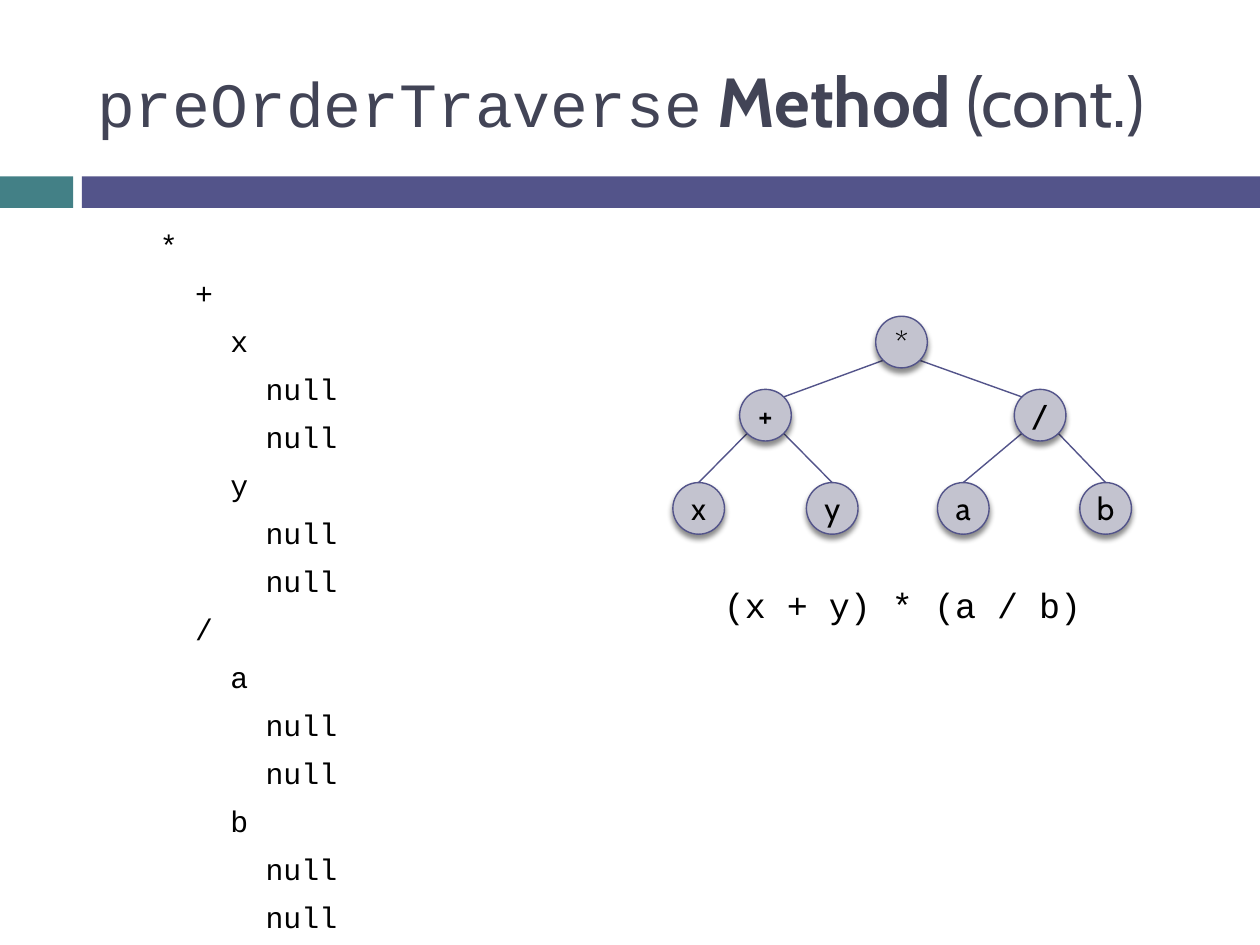
from math import sqrt

from lxml.etree import SubElement
from pptx import Presentation
from pptx.dml.color import RGBColor
from pptx.enum.shapes import MSO_CONNECTOR as CONN, MSO_SHAPE as SHAPE
from pptx.enum.text import MSO_ANCHOR as ANCHOR, PP_ALIGN as ALIGN
from pptx.oxml.ns import qn
from pptx.util import Inches, Pt

TEAL = RGBColor(0x43, 0x80, 0x86)
INDIGO = RGBColor(0x53, 0x54, 0x8A)
SLATE = RGBColor(0x42, 0x44, 0x56)
NODE_FILL = RGBColor(0xC3, 0xC3, 0xCF)
BLACK = RGBColor(0, 0, 0)
MONO, SANS = "Courier New", "Cabin"
NODE_SIZE = 0.41
INDENT = 0.28

TRAVERSAL = [
    ("*", 0), ("+", 1),
    ("x", 2), ("null", 3), ("null", 3),
    ("y", 2), ("null", 3), ("null", 3),
    ("/", 1),
    ("a", 2), ("null", 3), ("null", 3),
    ("b", 2), ("null", 3), ("null", 3),
]
NODES = {
    "*": (6.95, 2.51), "+": (5.87, 3.09), "/": (8.05, 3.09),
    "x": (5.34, 3.83), "y": (6.4, 3.83), "a": (7.44, 3.83), "b": (8.57, 3.83),
}
CHILDREN = {"*": "+/", "+": "xy", "/": "ab"}


def add_run(p, text, font, size, color, bold=False):
    r = p.add_run()
    r.text = text
    r.font.name = font
    r.font.size = Pt(size)
    r.font.bold = bold
    r.font.color.rgb = color


def add_title(s):
    sp = s.shapes.title
    sp.left, sp.top, sp.width, sp.height = map(Inches, (0.67, 0.25, 8.92, 1.08))
    tf = sp.text_frame
    tf.vertical_anchor = ANCHOR.MIDDLE
    p = tf.paragraphs[0]
    p.alignment = ALIGN.LEFT
    add_run(p, "preOrderTraverse", MONO, 36, SLATE)
    add_run(p, " Method ", SANS, 39.6, SLATE, True)
    add_run(p, "(cont.)", SANS, 39.6, SLATE)


def add_bar(s, left, width, color):
    sp = s.shapes.add_shape(SHAPE.RECTANGLE, Inches(left), Inches(1.4), Inches(width), Inches(0.25))
    sp.shadow.inherit = False
    sp.fill.solid()
    sp.fill.fore_color.rgb = color
    sp.line.fill.background()


def add_textbox(s, left, top, width, height):
    sp = s.shapes.add_textbox(Inches(left), Inches(top), Inches(width), Inches(height))
    sp.text_frame.word_wrap = True
    return sp.text_frame


def add_traversal(s):
    tf = add_textbox(s, 1.17, 1.76, 3.17, 4.95)
    tf.margin_top = Inches(0.04)
    for i, (text, level) in enumerate(TRAVERSAL):
        p = tf.add_paragraph() if i else tf.paragraphs[0]
        p.space_before = Pt(7 if i else 0)
        p._p.get_or_add_pPr().set("marL", str(Inches(INDENT * level)))
        add_run(p, text, MONO, 17, BLACK)


def add_shadow(sp):
    sp.shadow.inherit = False
    effects = sp._element.spPr.find(qn("a:effectLst"))
    shadow = SubElement(effects, qn("a:outerShdw"), blurRad=str(Pt(3)), dist=str(Pt(2.4)),
                        dir="5400000", rotWithShape="0")
    color = SubElement(shadow, qn("a:srgbClr"), val="000000")
    SubElement(color, qn("a:alpha"), val="45000")


def add_node(group, text, left, top):
    sp = group.shapes.add_shape(SHAPE.OVAL, Inches(left), Inches(top), Inches(NODE_SIZE), Inches(NODE_SIZE))
    add_shadow(sp)
    sp.fill.solid()
    sp.fill.fore_color.rgb = NODE_FILL
    sp.line.color.rgb = INDIGO
    sp.line.width = Pt(0.79)
    tf = sp.text_frame
    tf.margin_left = tf.margin_right = tf.margin_top = tf.margin_bottom = 0
    tf.vertical_anchor = ANCHOR.MIDDLE
    p = tf.paragraphs[0]
    p.alignment = ALIGN.CENTER
    add_run(p, text, SANS, 18, BLACK)


def rim_point(name, dx, dy):
    left, top = NODES[name]
    radius = NODE_SIZE / 2
    scale = radius / sqrt(dx * dx + dy * dy)
    return Inches(left + radius + dx * scale), Inches(top + radius + dy * scale)


def add_edge(group, parent, child, side):
    start = rim_point(parent, side, 1)
    end = rim_point(child, -side if child in CHILDREN else 0, -1)
    line = group.shapes.add_connector(CONN.STRAIGHT, *start, *end)
    line.line.color.rgb = INDIGO
    line.line.width = Pt(0.79)
    SubElement(line._element.spPr, qn("a:effectLst"))


def add_tree(s):
    group = s.shapes.add_group_shape()
    for parent, children in CHILDREN.items():
        for child, side in zip(children, (-1, 1)):
            add_edge(group, parent, child, side)
    for name, (left, top) in NODES.items():
        add_node(group, name, left, top)


def add_expression(s):
    p = add_textbox(s, 4.83, 4.58, 4.67, 0.44).paragraphs[0]
    p.alignment = ALIGN.CENTER
    add_run(p, "(x + y) * (a / b)", MONO, 20, BLACK)


def main():
    prs = Presentation()
    prs.slide_width, prs.slide_height = Inches(10), Inches(7.5)
    s = prs.slides.add_slide(prs.slide_layouts[5])
    add_bar(s, 0, 0.58, TEAL)
    add_bar(s, 0.65, 9.35, INDIGO)
    add_title(s)
    add_traversal(s)
    add_tree(s)
    add_expression(s)
    prs.save("out.pptx")


if __name__ == "__main__":
    main()
